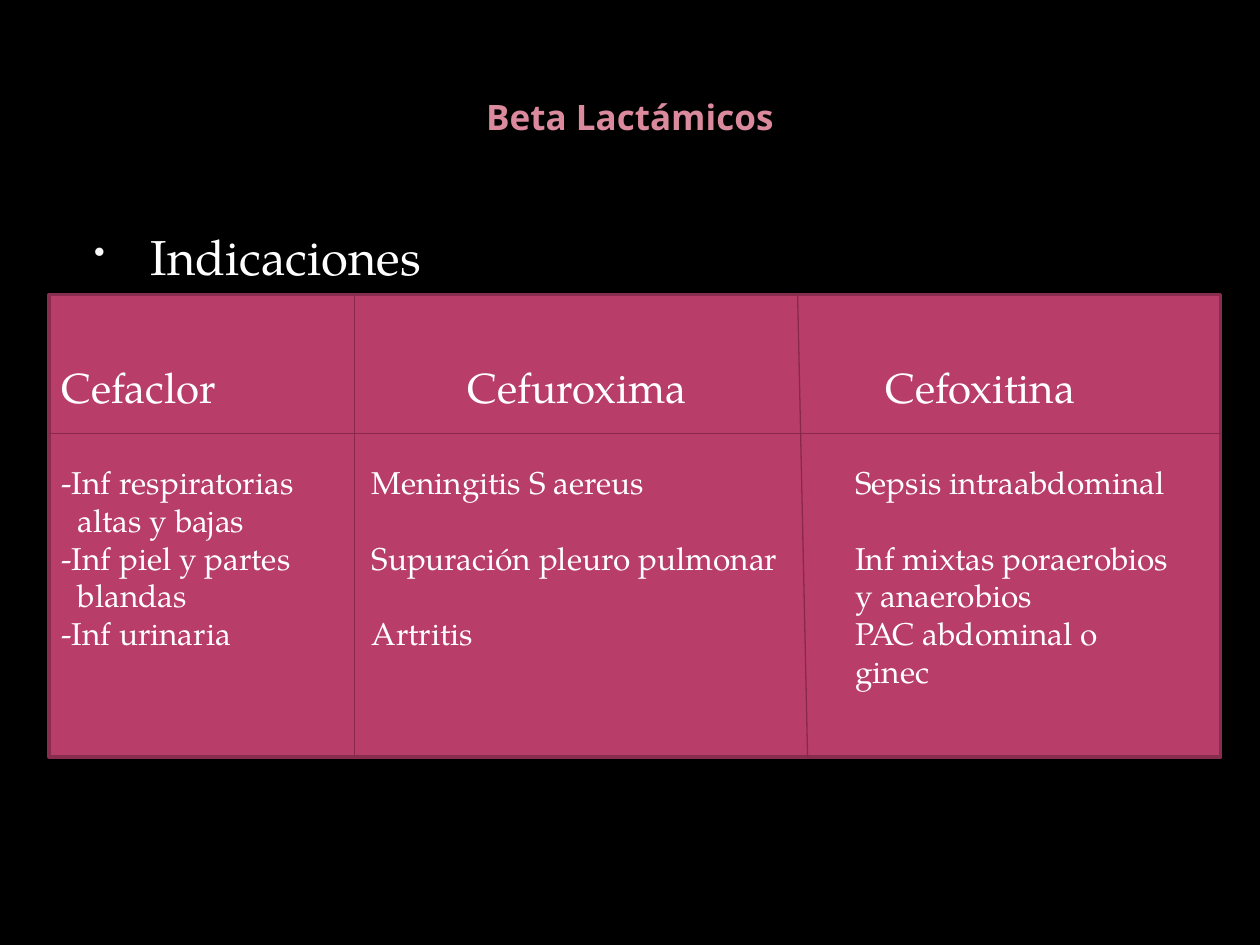
from dataclasses import dataclass

from lxml.etree import SubElement
from pptx import Presentation
from pptx.dml.color import RGBColor
from pptx.enum.shapes import MSO_CONNECTOR as Connector, MSO_SHAPE as Shape
from pptx.enum.text import MSO_ANCHOR as Anchor, PP_ALIGN as Align
from pptx.oxml.ns import qn
from pptx.util import Cm, Pt

BLACK = RGBColor(0x00, 0x00, 0x00)
WHITE = RGBColor(0xFF, 0xFF, 0xFF)
ROSE = RGBColor(0xDB, 0x8A, 0x9E)
RASPBERRY = RGBColor(0xB8, 0x3D, 0x68)
BORDER = RGBColor(0x88, 0x2D, 0x4D)
DIVIDER = RGBColor(0x8A, 0x28, 0x4A)
SANS, SERIF = "Noto Sans", "TeX Gyre Pagella"
LEFT, TOP, RIGHT, BOTTOM = 0.99, 5.94, 24.61, 15.26
HEADER_BOTTOM = 8.74


@dataclass(frozen=True)
class Row:
    text: str
    size: int = 18
    tabs: tuple[float, ...] = (0.33, 6.25, 16.0)
    after: int = 0


@dataclass(frozen=True)
class Divider:
    x1: float
    y1: float
    x2: float
    y2: float


ROWS = (
    Row("Cefaclor\tCefuroxima\tCefoxitina", 24, (8.18, 16.61), 29),
    Row("-Inf respiratorias\tMeningitis S aereus\tSepsis intraabdominal"),
    Row("\taltas y bajas"),
    Row("-Inf piel y partes\tSupuración pleuro pulmonar\tInf mixtas poraerobios"),
    Row("\tblandas\t\ty anaerobios"),
    Row("-Inf urinaria\tArtritis\tPAC abdominal o"),
    Row("\t\t\tginec"),
)
DIVIDERS = (
    Divider(7.14, TOP, 7.14, BOTTOM),
    Divider(16.08, TOP, 16.28, BOTTOM),
    Divider(LEFT, HEADER_BOTTOM, RIGHT, HEADER_BOTTOM),
)


def add_run(paragraph, text: str, size: int, font: str = SERIF,
            color: RGBColor = WHITE, bold: bool = False) -> None:
    run = paragraph.add_run()
    run.text = text
    run.font.size, run.font.name, run.font.bold = Pt(size), font, bold
    run.font.color.rgb = color


def add_title(slide) -> None:
    frame = slide.shapes.add_textbox(Cm(1.27), Cm(0.76), Cm(22.86), Cm(3.18)).text_frame
    frame.word_wrap = True
    frame.vertical_anchor = Anchor.MIDDLE
    heading = frame.paragraphs[0]
    heading.alignment = Align.CENTER
    add_run(heading, "Beta Lactámicos", 20, SANS, ROSE, True)


def add_topic(slide) -> None:
    frame = slide.shapes.add_textbox(Cm(1.27), Cm(4.45), Cm(22.86), Cm(13.08)).text_frame
    frame.word_wrap = True
    topic = frame.paragraphs[0]
    topic.space_before = Pt(5.6)
    add_run(topic, "Indicaciones", 28)
    props = topic._p.get_or_add_pPr()
    props.set("marL", str(Cm(1.52)))
    props.set("indent", str(Cm(-1.14)))
    SubElement(SubElement(props, qn("a:buClr")), qn("a:srgbClr"), val="F9F9F9")
    SubElement(props, qn("a:buSzPct"), val="65000")
    SubElement(props, qn("a:buChar"), char="•")


def add_row(paragraph, row: Row) -> None:
    paragraph.alignment = Align.LEFT
    paragraph.space_after = Pt(row.after)
    stops = SubElement(paragraph._p.get_or_add_pPr(), qn("a:tabLst"))
    for position in row.tabs:
        SubElement(stops, qn("a:tab"), pos=str(Cm(position)), algn="l")
    add_run(paragraph, row.text, row.size)


def add_panel(slide) -> None:
    panel = slide.shapes.add_shape(
        Shape.RECTANGLE, Cm(LEFT), Cm(TOP), Cm(RIGHT - LEFT), Cm(BOTTOM - TOP))
    panel.shadow.inherit = False
    panel.fill.solid()
    panel.fill.fore_color.rgb = RASPBERRY
    panel.line.color.rgb = BORDER
    panel.line.width = Pt(2)
    frame = panel.text_frame
    frame.word_wrap = True
    frame.vertical_anchor = Anchor.MIDDLE
    for index, row in enumerate(ROWS):
        add_row(frame.add_paragraph() if index else frame.paragraphs[0], row)


def add_divider(slide, divider: Divider) -> None:
    line = slide.shapes.add_connector(
        Connector.STRAIGHT, Cm(divider.x1), Cm(divider.y1), Cm(divider.x2), Cm(divider.y2))
    line.line.color.rgb = DIVIDER
    line.line.width = Pt(0.75)
    SubElement(line._element.spPr, qn("a:effectLst"))


def main() -> None:
    """Build the slide on indications of beta-lactams."""
    deck = Presentation()
    deck.slide_width, deck.slide_height = Cm(25.4), Cm(19.05)
    slide = deck.slides.add_slide(deck.slide_layouts[6])
    slide.background.fill.solid()
    slide.background.fill.fore_color.rgb = BLACK
    add_title(slide)
    add_topic(slide)
    add_panel(slide)
    for divider in DIVIDERS:
        add_divider(slide, divider)
    deck.save("out.pptx")


if __name__ == "__main__":
    main()
